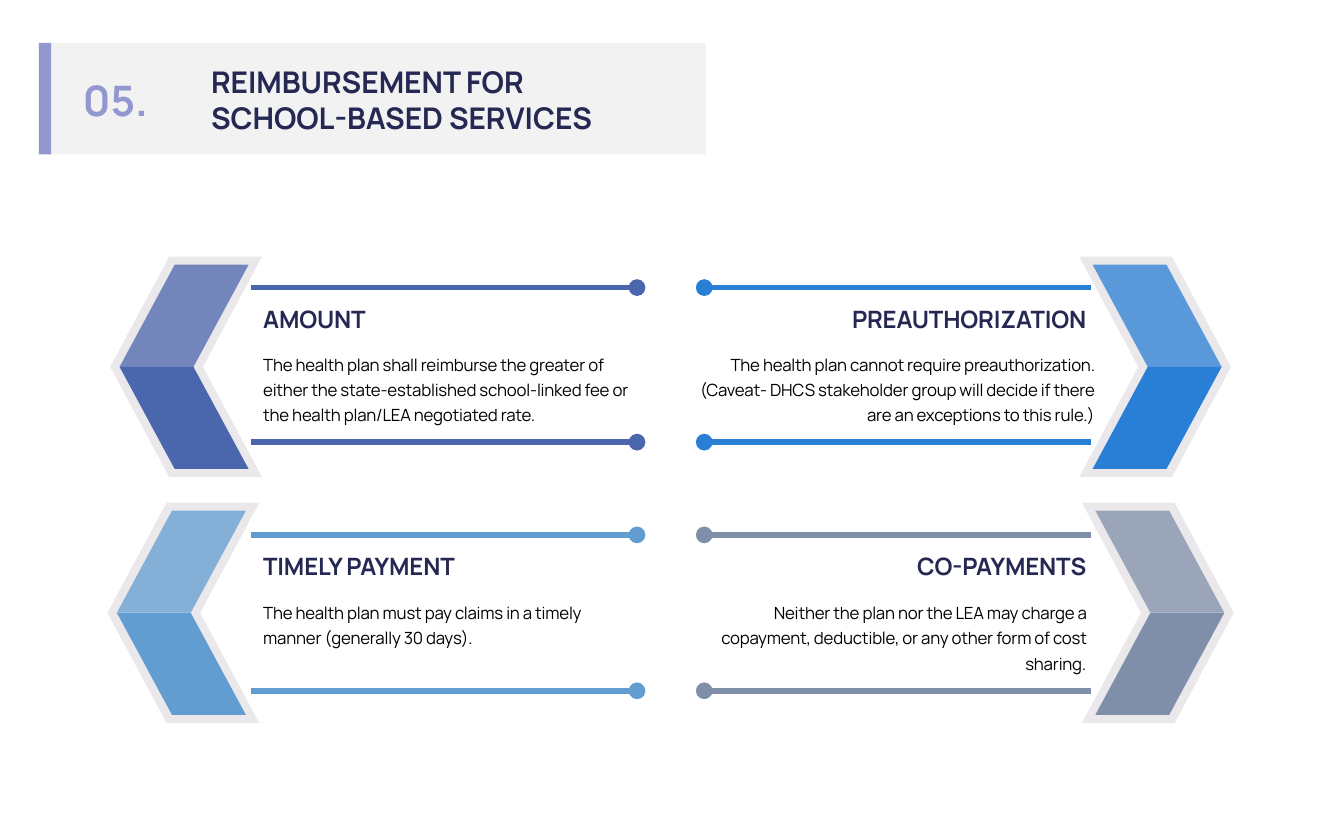
from lxml import etree
from pptx import Presentation
from pptx import util as u
from pptx.dml.color import RGBColor
from pptx.enum import shapes, text
from pptx.oxml import ns

NAVY, LILAC, GREY, HALO = "242852", "9297CF", "F2F2F2", "9D90A0"
LEFT, RIGHT = text.PP_ALIGN.LEFT, text.PP_ALIGN.RIGHT
TOP, MIDDLE, BOTTOM = (text.MSO_ANCHOR.TOP, text.MSO_ANCHOR.MIDDLE,
                       text.MSO_ANCHOR.BOTTOM)


def color(value):
    return RGBColor.from_string(value)


class Deck:
    """Holds the font and the slide being drawn."""

    font = "Manrope"

    def __init__(self, presentation):
        self.slide = presentation.slides.add_slide(presentation.slide_layouts[5])

    def paint(self, shape, fill, opacity=100):
        shape.shadow.inherit = False
        shape.line.fill.background()
        shape.fill.solid()
        shape.fill.fore_color.rgb = color(fill)
        if opacity < 100:
            rgb = shape._element.spPr.find(".//" + ns.qn("a:srgbClr"))
            etree.SubElement(rgb, ns.qn("a:alpha"), val=str(opacity * 1000))

    def bar(self, box, fill):
        shape = self.slide.shapes.add_shape(
            shapes.MSO_SHAPE.RECTANGLE, *map(u.Inches, box))
        self.paint(shape, fill)

    def polygon(self, points, fill, opacity=100):
        points = [(u.Inches(x), u.Inches(y)) for x, y in points]
        builder = self.slide.shapes.build_freeform(*points[0])
        builder.add_line_segments(points[1:], close=True)
        self.paint(builder.convert_to_shape(), fill, opacity)

    def chevron(self, tip, middle, side, fill):
        """Draw a two-tone chevron on a pale halo; side is 1 if it points left."""
        halo_tip = tip - side * 0.07
        self.polygon([(halo_tip + side * x, middle + y) for x, y in
                      [(1.13, -0.82), (0.44, -0.82), (0, 0), (0.44, 0.82),
                       (1.13, 0.82), (0.69, 0)]], HALO, 20)
        for height, opacity in ((-0.76, 75), (0.76, 100)):
            self.polygon([(tip + side * x, middle + y) for x, y in
                          [(0, 0), (0.55, 0), (0.96, height), (0.41, height)]],
                         fill, opacity)

    def dotted_line(self, start, end, y, stroke):
        """Draw a horizontal line that ends in a dot."""
        line = self.slide.shapes.add_connector(
            shapes.MSO_CONNECTOR.STRAIGHT,
            *map(u.Inches, (start, y, end, y)))
        line.line.color.rgb = color(stroke)
        line.line.width = u.Pt(3)
        outline = line._element.spPr.find(ns.qn("a:ln"))
        etree.SubElement(outline, ns.qn("a:tailEnd"), type="oval")
        etree.SubElement(line._element.spPr, ns.qn("a:effectLst"))

    def fill_text(self, shape, words, size, fill, bold=False, align=LEFT,
                  anchor=TOP, leading=None, tracking=None, wrap=True):
        frame = shape.text_frame
        frame.word_wrap = wrap
        frame.auto_size = text.MSO_AUTO_SIZE.NONE
        frame.vertical_anchor = anchor
        paragraph = frame.paragraphs[0]
        paragraph.alignment = align
        if leading:
            paragraph.line_spacing = u.Pt(leading)
        run = paragraph.add_run()
        run.text = words
        run.font.name = self.font
        run.font.size = u.Pt(size)
        run.font.bold = bold
        run.font.color.rgb = color(fill)
        if tracking:
            run._r.get_or_add_rPr().set("spc", str(tracking))

    def label(self, box, words, size, fill, **style):
        shape = self.slide.shapes.add_textbox(*map(u.Inches, box))
        self.fill_text(shape, words, size, fill, **style)

    def title(self, box, words):
        shape = self.slide.shapes.title
        shape.left, shape.top, shape.width, shape.height = map(u.Inches, box)
        self.fill_text(shape, words, 16, NAVY, bold=True, anchor=BOTTOM)
        self.slide.shapes._spTree.append(shape._element)  # in front of its band

    def card(self, side, tip, middle, rules, heading_top, fill, heading, body,
             body_box):
        self.chevron(tip, middle, side, fill)
        start, end = (1.87, 4.74) if side == 1 else (8.12, 5.24)
        for y in rules:
            self.dotted_line(start, end, y, fill)
        align = LEFT if side == 1 else RIGHT
        left = 1.86 if side == 1 else 5.17
        self.label((left, heading_top, 3.01, 0.32), heading, 12.8, NAVY,
                   bold=True, align=align, anchor=BOTTOM, tracking=-10)
        self.label(body_box, body, 9, "000000", align=align, leading=13.5,
                   tracking=-10)


def main():
    presentation = Presentation()
    presentation.slide_width = u.Inches(10)
    presentation.slide_height = u.Inches(6.25)
    deck = Deck(presentation)

    deck.bar((0.37, 0.32, 4.88, 0.83), GREY)
    deck.bar((0.29, 0.32, 0.09, 0.83), LILAC)
    deck.label((0.51, 0.5, 0.7, 0.48), "05.", 22.5, LILAC, bold=True,
               align=text.PP_ALIGN.CENTER, anchor=MIDDLE, wrap=False)
    deck.title((1.47, 0.42, 3.46, 0.64), "REIMBURSEMENT FOR SCHOOL-BASED SERVICES")

    upper = (2.73, (2.14, 3.29), 2.21)
    lower = (4.56, (3.98, 5.14), 4.05)
    deck.card(1, 0.89, *upper, "4A66AC", "AMOUNT",
              "The health plan shall reimburse the greater of either the "
              "state-established school-linked fee or the health plan/LEA "
              "negotiated rate.", (1.86, 2.55, 3.01, 0.68))
    deck.card(-1, 9.09, *upper, "297FD5", "PREAUTHORIZATION",
              "The health plan cannot require preauthorization. (Caveat- DHCS "
              "stakeholder group will decide if there are an exceptions to "
              "this rule.)", (5.03, 2.55, 3.21, 0.68))
    deck.card(1, 0.87, *lower, "629DD1", "TIMELY PAYMENT",
              "The health plan must pay claims in a timely manner (generally "
              "30 days).", (1.86, 4.4, 3.01, 0.48))
    deck.card(-1, 9.11, *lower, "7F8FA9", "CO-PAYMENTS",
              "Neither the plan nor the LEA may charge a copayment, "
              "deductible, or any other form of cost sharing.",
              (5.17, 4.4, 3.01, 0.68))
    presentation.save("out.pptx")


if __name__ == "__main__":
    main()
